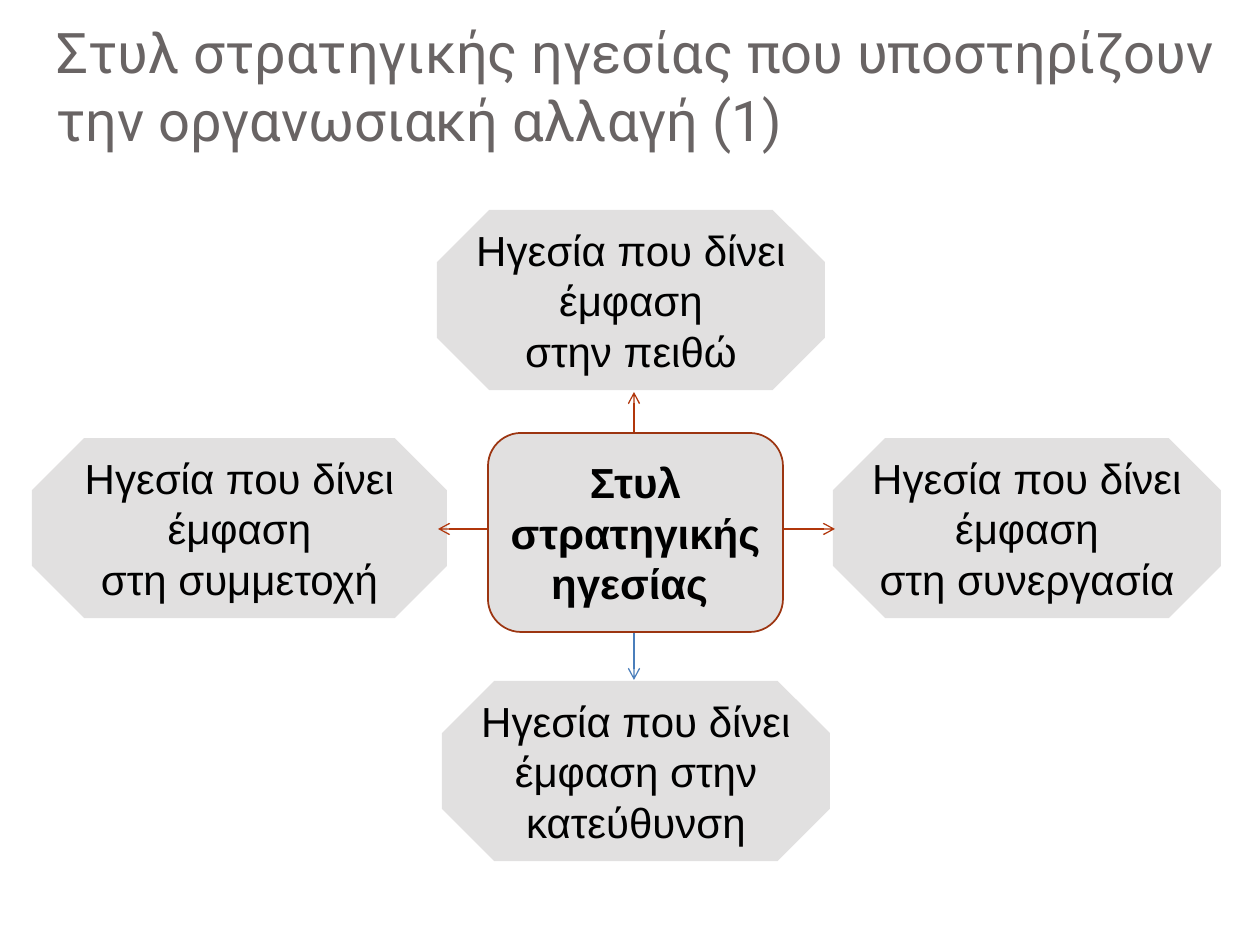
"""Build a slide on leadership styles that support organisational change."""
from typing import NamedTuple

from pptx import Presentation
from pptx.dml.color import RGBColor as Rgb
from pptx.enum.shapes import MSO_CONNECTOR as Link, MSO_SHAPE as Kind
from pptx.enum.text import MSO_ANCHOR as Anchor, PP_ALIGN as Align
from pptx.oxml.ns import qn
from pptx.util import Emu, Pt

COLORS = {"title": "696464", "text": "000000", "fill": "E1E0E0",
          "edge": "9C3511", "red": "B1360B", "blue": "4A7EBB"}


class Style(NamedTuple):
    left: int
    top: int
    width: int
    text: str


class Arrow(NamedTuple):
    x1: int
    y1: int
    x2: int
    y2: int
    color: str


HIGH = 180
MID_Y, MID_X = 529, 634
STYLES = [
    Style(437, 210, 388, "Ηγεσία που δίνει\vέμφαση\nστην πειθώ"),
    Style(32, 438, 415, "Ηγεσία που δίνει\nέμφαση\nστη συμμετοχή"),
    Style(833, 438, 388, "Ηγεσία που δίνει\nέμφαση\nστη συνεργασία"),
    Style(442, 681, 388, "Ηγεσία που δίνει\nέμφαση στην\nκατεύθυνση"),
]
ARROWS = [
    Arrow(771, MID_Y, 835, MID_Y, "red"),
    Arrow(493, MID_Y, 438, MID_Y, "red"),
    Arrow(MID_X, 621, MID_X, 680, "blue"),
    Arrow(MID_X, 451, MID_X, 392, "red"),
]


def px(size: int) -> Emu:
    """Turn pixels into EMU."""
    return Emu(round(size * 914400 / 126))


def rgb(name: str) -> Rgb:
    """Look up a colour."""
    return Rgb.from_string(COLORS[name])


def write(shape, text: str, *, size=24, font="Arial", color="text", bold=False,
          align=Align.CENTER, anchor=Anchor.MIDDLE, wrap=True) -> None:
    """Put formatted text in a shape."""
    frame = shape.text_frame
    frame.text = text
    frame.word_wrap = wrap
    frame.vertical_anchor = anchor
    for para in frame.paragraphs:
        para.alignment = align
        for run in para.runs:
            run.font.size = Pt(size)
            run.font.name = font
            run.font.bold = bold
            run.font.color.rgb = rgb(color)


def add_box(slide, kind, left: int, top: int, width: int, height: int):
    """Draw a flat grey shape without an outline."""
    box = slide.shapes.add_shape(kind, px(left), px(top), px(width), px(height))
    box.shadow.inherit = False
    box.fill.solid()
    box.fill.fore_color.rgb = rgb("fill")
    box.line.fill.background()
    return box


def add_style(slide, style: Style) -> None:
    """Draw one leadership style as an octagon."""
    box = add_box(slide, Kind.OCTAGON, style.left, style.top, style.width, HIGH)
    box.adjustments[0] = 0.29
    write(box, style.text, wrap=False)


def add_arrow(slide, arrow: Arrow) -> None:
    """Draw one arrow out of the centre."""
    ends = [px(end) for end in arrow[:4]]
    line = slide.shapes.add_connector(Link.STRAIGHT, *ends)
    line.line.color.rgb = rgb(arrow.color)
    line.line.width = Pt(0.75)
    tail = line.line._get_or_add_ln().makeelement(qn("a:tailEnd"), {"type": "arrow"})
    line.line._get_or_add_ln().append(tail)
    props = line._element.spPr
    props.append(props.makeelement(qn("a:effectLst"), {}))


def add_title(slide) -> None:
    """Place and format the title."""
    title = slide.shapes.title
    title.left, title.top = px(44), px(16)
    title.width, title.height = px(1260), px(149)
    write(title, "Στυλ στρατηγικής ηγεσίας που υποστηρίζουν την οργανωσιακή αλλαγή (1)",
          size=32, font="Roboto", color="title", align=Align.LEFT, anchor=Anchor.BOTTOM)
    title.text_frame.margin_bottom = Pt(7.2)


def main() -> None:
    """Build and save the slide."""
    deck = Presentation()
    deck.slide_width, deck.slide_height = px(1260), px(945)
    slide = deck.slides.add_slide(deck.slide_layouts[5])
    add_title(slide)
    for style in STYLES:
        add_style(slide, style)
    for arrow in ARROWS:
        add_arrow(slide, arrow)
    core = add_box(slide, Kind.ROUNDED_RECTANGLE, 488, 433, 295, 199)
    core.line.color.rgb = rgb("edge")
    core.line.width = Pt(1)
    write(core, "Στυλ στρατηγικής ηγεσίας ", bold=True)
    deck.save("out.pptx")


if __name__ == "__main__":
    main()
